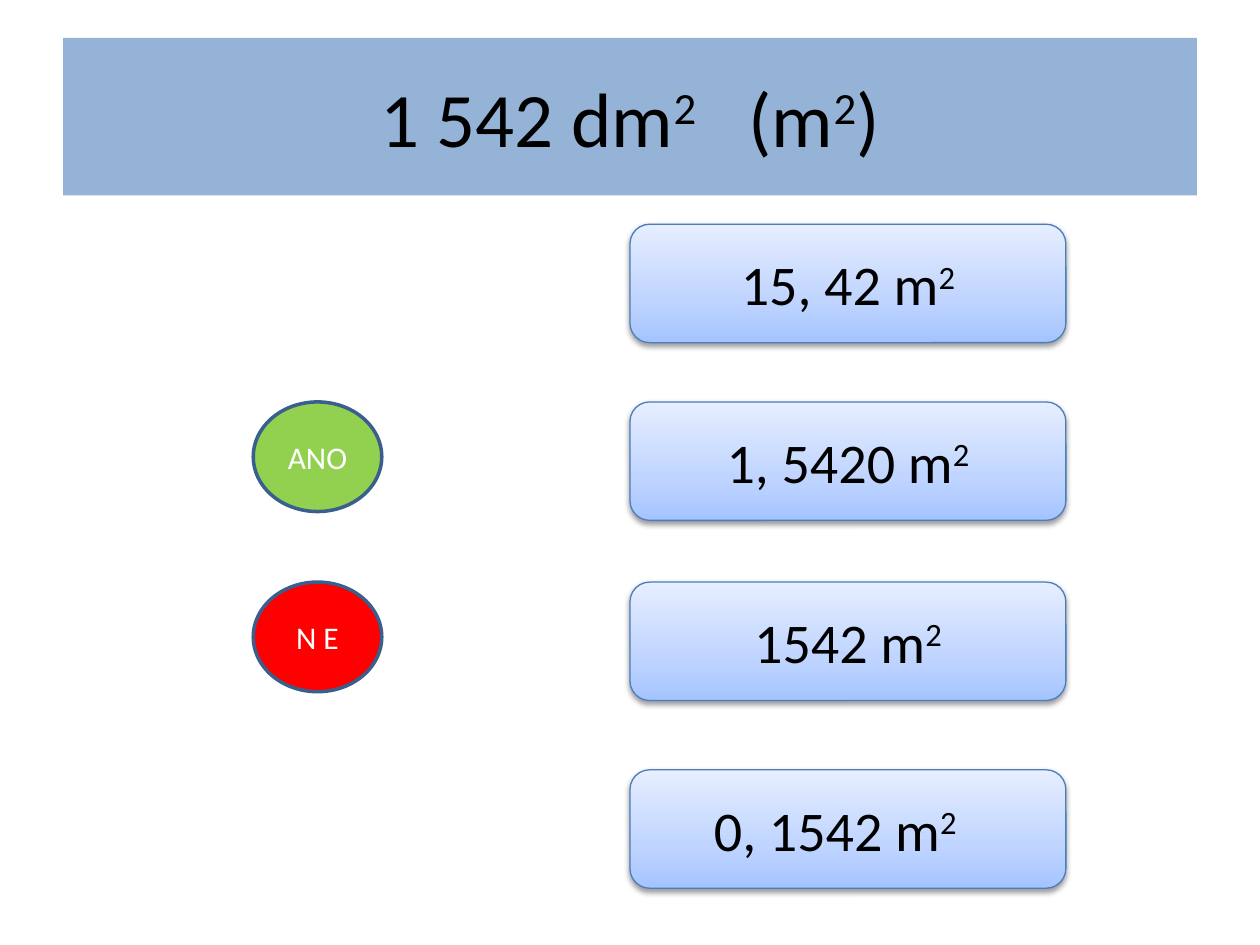
from lxml import etree
from pptx import Presentation
from pptx.dml.color import RGBColor
from pptx.enum.shapes import MSO_SHAPE
from pptx.enum.text import MSO_ANCHOR, PP_ALIGN
from pptx.oxml.ns import qn
from pptx.util import Inches, Pt

ELLIPSE, ROUNDED = MSO_SHAPE.OVAL, MSO_SHAPE.ROUNDED_RECTANGLE
MIDDLE, CENTER = MSO_ANCHOR.MIDDLE, PP_ALIGN.CENTER

TITLE_FONT = {"size": Pt(44), "name": "Calibri"}
ANSWER_FONT = {"size": Pt(32), "name": "Calibri"}
BUTTON_FONT = {"size": Pt(18), "name": "Calibri"}
GRADIENT = [(0, "A4C4FF"), (35, "BFD4FF"), (100, "E6EEFF")]
ROW_TOPS = [1.78, 3.19, 4.62, 6.11]
ANSWERS = ["15, 42 m", "1, 5420 m", "1542 m", "0, 1542 m"]
BUTTONS = [("ANO", "92D050"), ("N E", "FF0000")]


def rgb(value):
    """Turn a hex string into a colour."""
    return RGBColor.from_string(value)


def add_child(parent, tag, **attrs):
    """Append a drawing element with the given attributes."""
    return etree.SubElement(parent, qn(tag), {k: str(v) for k, v in attrs.items()})


def write(shape, runs, font, color):
    """Write one centred paragraph from (text, run attributes) pairs."""
    tf = shape.text_frame
    tf.word_wrap = True
    tf.vertical_anchor = MIDDLE
    p = tf.paragraphs[0]
    p.alignment = CENTER
    for text, attrs in runs:
        r = p.add_run()
        r.text = text
        for name, value in font.items():
            setattr(r.font, name, value)
        r.font.color.rgb = rgb(color)
        for name, value in attrs.items():
            r._r.get_or_add_rPr().set(name, value)


def add_outlined(s, kind, box, line, width):
    """Add a preset shape with an outline and no inherited shadow."""
    sp = s.shapes.add_shape(kind, *(Inches(v) for v in box))
    sp.shadow.inherit = False
    sp.line.color.rgb = rgb(line)
    sp.line.width = Pt(width)
    return sp


def add_title(s, box):
    """Place the task in the title band."""
    sp = s.shapes.title
    sp.left, sp.top, sp.width, sp.height = (Inches(v) for v in box)
    sp.fill.solid()
    sp.fill.fore_color.rgb = rgb("95B3D7")
    raised = {"baseline": "30000"}
    runs = [("1 542 dm", {}), ("2", raised), (" ", {"spc": "2000"}),
            ("(m", {}), ("2", raised), (")", {})]
    write(sp, runs, TITLE_FONT, "000000")


def add_button(s, box, text, color):
    """Add a round verdict button."""
    sp = add_outlined(s, ELLIPSE, box, "3A5F8C", 2)
    sp.fill.solid()
    sp.fill.fore_color.rgb = rgb(color)
    write(sp, [(text, {})], BUTTON_FONT, "FFFFFF")


def add_answer(s, box, text):
    """Add an answer card with a gradient and a soft shadow."""
    sp = add_outlined(s, ROUNDED, box, "4B7EBC", 0.75)
    sp.fill.gradient()
    sp.fill.gradient_angle = 90
    spPr = sp._element.spPr
    stops = spPr.find(".//" + qn("a:gsLst"))
    for stop in list(stops):
        stops.remove(stop)
    for position, color in GRADIENT:
        add_child(add_child(stops, "a:gs", pos=position * 1000), "a:srgbClr", val=color)
    shadow = add_child(spPr.find(qn("a:effectLst")), "a:outerShdw", blurRad=Pt(3.1),
                       dist=Pt(1.6), dir=5400000, rotWithShape=0)
    add_child(add_child(shadow, "a:srgbClr", val="000000"), "a:alpha", val=38000)
    write(sp, [(text, {}), ("2", {"baseline": "30000"})], ANSWER_FONT, "000000")
    return sp


def main():
    """Build the quiz slide."""
    prs = Presentation()
    prs.slide_width, prs.slide_height = Inches(10), Inches(7.5)
    s = prs.slides.add_slide(prs.slide_layouts[5])
    add_title(s, (0.5, 0.3, 9, 1.25))
    for top, (text, color) in zip(ROW_TOPS[1:], BUTTONS):
        add_button(s, (2.01, top, 1.02, 0.87), text, color)
    cards = [add_answer(s, (5, top, 3.46, 0.94), text)
             for top, text in zip(ROW_TOPS, ANSWERS)]
    cards[-1].text_frame.margin_right = Inches(0.3)
    prs.save("out.pptx")


if __name__ == "__main__":
    main()
